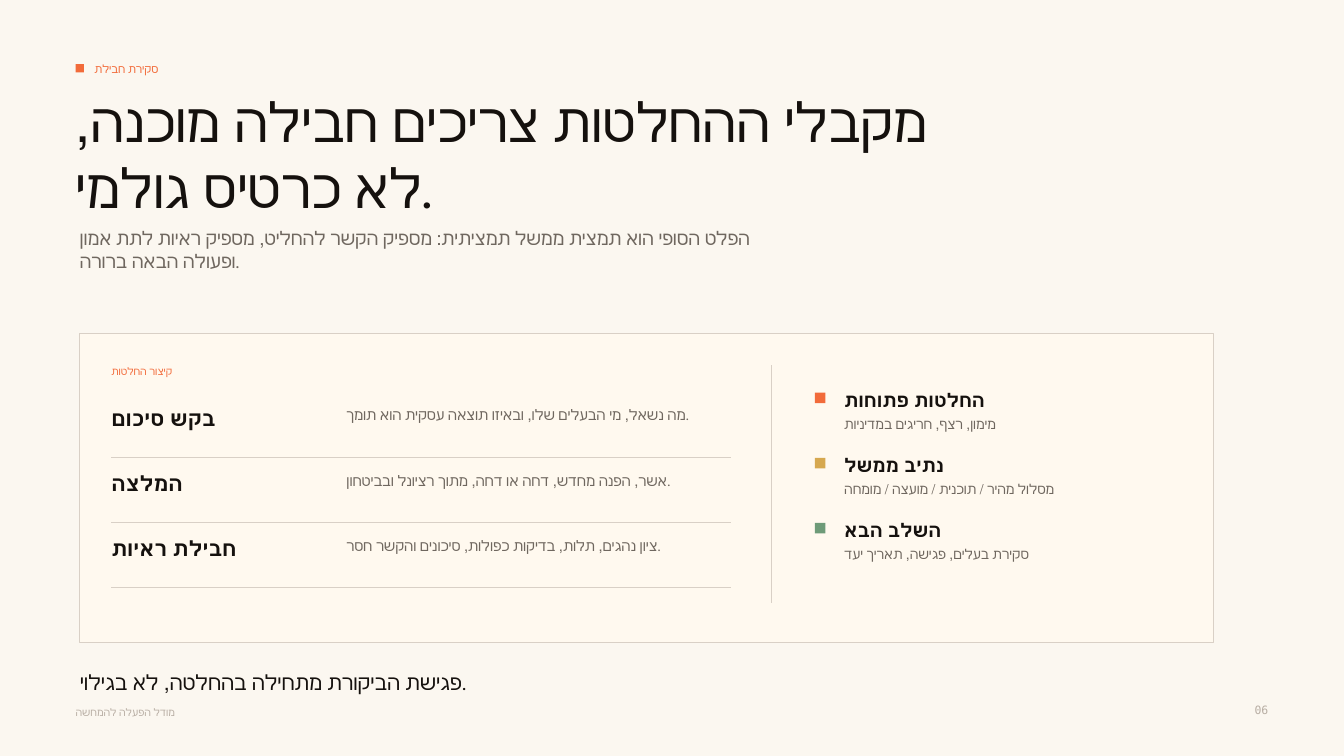
from lxml import etree
from pptx import Presentation
from pptx.dml.color import RGBColor
from pptx.enum.shapes import MSO_CONNECTOR, MSO_SHAPE
from pptx.enum.text import MSO_ANCHOR, MSO_AUTO_SIZE, PP_ALIGN
from pptx.oxml.ns import qn
from pptx.util import Emu, Pt

PX = 9525
LEFT, RIGHT = PP_ALIGN.LEFT, PP_ALIGN.RIGHT
TOP, MIDDLE = MSO_ANCHOR.TOP, MSO_ANCHOR.MIDDLE
NO_AUTOFIT = MSO_AUTO_SIZE.NONE
RECT = MSO_SHAPE.RECTANGLE
STRAIGHT = MSO_CONNECTOR.STRAIGHT
TITLE_ONLY = 5

SANS, MONO = "Karla", "DejaVu Sans Mono"
COLORS = {
    "paper": "FBF7F0",
    "panel": "FFF9EF",
    "rule": "D9D0C6",
    "ink": "15110E",
    "muted": "6F675F",
    "faint": "B8AEA4",
    "orange": "F26B3A",
    "gold": "D6A84F",
    "green": "6E9B78",
}

ROW_PITCH = 62
BRIEF_ROWS = [
    ("בקש סיכום", "מה נשאל, מי הבעלים שלו, ובאיזו תוצאה עסקית הוא תומך."),
    ("המלצה", "אשר, הפנה מחדש, דחה או דחה, מתוך רציונל ובביטחון."),
    ("חבילת ראיות", "ציון נהגים, תלות, בדיקות כפולות, סיכונים והקשר חסר."),
]
STATUS_ITEMS = [
    ("orange", "החלטות פתוחות", "מימון, רצף, חריגים במדיניות"),
    ("gold", "נתיב ממשל", "מסלול מהיר / תוכנית / מועצה / מומחה"),
    ("green", "השלב הבא", "סקירת בעלים, פגישה, תאריך יעד"),
]


def px(*values):
    return [Emu(v * PX) for v in values]


def rgb(name):
    return RGBColor.from_string(COLORS[name])


def write(sp, text, size, color, font=SANS, bold=False, align=LEFT, anchor=TOP):
    """Put one paragraph of text in a shape, without insets."""
    tf = sp.text_frame
    tf.word_wrap = True
    tf.auto_size = NO_AUTOFIT
    tf.vertical_anchor = anchor
    tf.margin_left = tf.margin_top = tf.margin_right = tf.margin_bottom = 0
    p = tf.paragraphs[0]
    p.text = text
    p.alignment = align
    p.font.size = Pt(size)
    p.font.name = font
    p.font.bold = bold
    p.font.color.rgb = rgb(color)


def add_title(s, box, text, size):
    sp = s.shapes.title
    sp.left, sp.top, sp.width, sp.height = px(*box)
    write(sp, text, size, "ink")


def add_text(s, box, text, size, color, **style):
    write(s.shapes.add_textbox(*px(*box)), text, size, color, **style)


def add_box(s, box, fill, line=None):
    sp = s.shapes.add_shape(RECT, *px(*box))
    sp.shadow.inherit = False
    sp.fill.solid()
    sp.fill.fore_color.rgb = rgb(fill)
    if line:
        sp.line.color.rgb = rgb(line)
        sp.line.width = Pt(0.75)
    else:
        sp.line.fill.background()


def add_rule(s, x1, y1, x2, y2):
    cxn = s.shapes.add_connector(STRAIGHT, *px(x1, y1, x2, y2))
    cxn.line.color.rgb = rgb("rule")
    cxn.line.width = Pt(0.75)
    etree.SubElement(cxn._element.spPr, qn("a:effectLst"))


def add_brief_row(s, y, heading, detail):
    add_text(s, (106, y, 210, 24), heading, 15, "ink", bold=True)
    add_text(s, (330, y + 1, 360, 40), detail, 10.5, "muted")
    add_rule(s, 106, y + 50, 696, y + 50)


def add_status_item(s, y, color, heading, detail):
    add_box(s, (776, y + 4, 10, 10), color)
    add_text(s, (804, y, 200, 22), heading, 13.5, "ink", bold=True)
    add_text(s, (804, y + 26, 270, 28), detail, 9.8, "muted")


def main():
    prs = Presentation()
    prs.slide_width, prs.slide_height = px(1280, 720)
    s = prs.slides.add_slide(prs.slide_layouts[TITLE_ONLY])
    s.background.fill.solid()
    s.background.fill.fore_color.rgb = rgb("paper")

    add_box(s, (72, 61, 8, 8), "orange")
    add_text(s, (90, 54, 420, 24), "סקירת חבילת", 8.2, "orange",
             font=MONO, anchor=MIDDLE)
    add_title(s, (72, 84, 860, 132),
              "מקבלי ההחלטות צריכים חבילה מוכנה, לא כרטיס גולמי.", 39)
    add_text(s, (76, 216, 680, 64),
             "הפלט הסופי הוא תמצית ממשל תמציתית: מספיק הקשר להחליט, "
             "מספיק ראיות לתת אמון ופעולה הבאה ברורה.", 13.5, "muted")

    add_box(s, (76, 318, 1080, 294), "panel", line="rule")
    add_text(s, (106, 348, 220, 18), "קיצור החלטות", 7.5, "orange", font=MONO)
    for i, row in enumerate(BRIEF_ROWS):
        add_brief_row(s, 386 + i * ROW_PITCH, *row)
    add_rule(s, 735, 348, 735, 574)
    for i, item in enumerate(STATUS_ITEMS):
        add_status_item(s, 370 + i * ROW_PITCH, *item)

    add_text(s, (76, 638, 720, 28),
             "פגישת הביקורת מתחילה בהחלטה, לא בגילוי.", 15, "ink")
    add_text(s, (72, 672, 320, 18), "מודל הפעלה להמחשה", 7.5, "faint", font=MONO)
    add_text(s, (1160, 670, 48, 20), "06", 8.2, "faint", font=MONO, align=RIGHT)
    prs.save("out.pptx")


if __name__ == "__main__":
    main()
